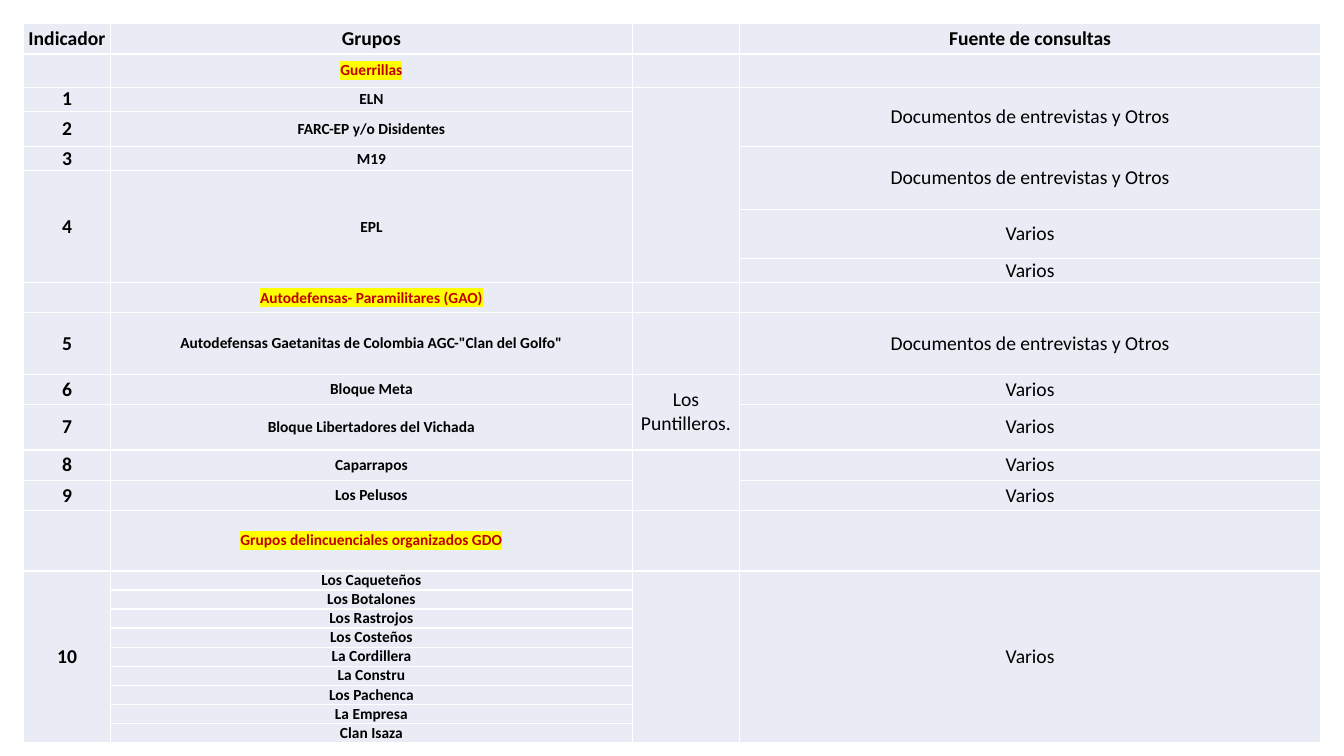
from dataclasses import dataclass
from typing import Any, Optional

import pptx
import pptx.dml.color
import pptx.enum.text
import pptx.oxml.ns
import pptx.util
from lxml import etree

UNIT = pptx.util.Inches(0.01)
SLIDE_COLUMNS, SLIDE_ROWS = 1333.3, 750
TABLE_LEFT, TABLE_TOP = 23.5, 23.5
COLUMN_WIDTHS = (86, 518, 106, 577)
FONT = "Calibri"
COLORS = {
    "text": "000000",
    "section": "C00000",
    "highlight": "FFFF00",
    "cell": "E9EBF5",
    "border": "FFFFFF",
}
INTERVIEWS = "Documentos de entrevistas y Otros"
VARIOUS = "Varios"
GANGS = (
    "Los Botalones", "Los Rastrojos", "Los Costeños", "La Cordillera",
    "La Constru", "Los Pachenca", "La Empresa", "Clan Isaza",
)


@dataclass(frozen=True)
class Row:
    """A None entry continues the cell above it."""

    height: float
    indicator: Optional[str] = ""
    group: Optional[str] = ""
    alliance: Optional[str] = ""
    source: Optional[str] = ""
    kind: str = "body"

    def texts(self) -> tuple[Optional[str], ...]:
        return self.indicator, self.group, self.alliance, self.source


ROWS = [
    Row(30, "Indicador", "Grupos", "", "Fuente de consultas", kind="header"),
    Row(33, group="Guerrillas", kind="section"),
    Row(24, "1", "ELN", "", INTERVIEWS),
    Row(35, "2", "FARC-EP y/o Disidentes", None, None),
    Row(24, "3", "M19", None, INTERVIEWS),
    Row(38, "4", "EPL", None, None),
    Row(49, None, None, None, VARIOUS),
    Row(24, None, None, None, VARIOUS),
    Row(30, group="Autodefensas- Paramilitares (GAO)", kind="section"),
    Row(61, "5", 'Autodefensas Gaetanitas de Colombia AGC-"Clan del Golfo"', "", INTERVIEWS),
    Row(30, "6", "Bloque Meta", "Los Puntilleros.", VARIOUS),
    Row(45, "7", "Bloque Libertadores del Vichada", None, VARIOUS),
    Row(30, "8", "Caparrapos", "", VARIOUS),
    Row(30, "9", "Los Pelusos", None, VARIOUS),
    Row(60, group="Grupos delincuenciales organizados GDO", kind="section"),
    Row(18.8, "10", "Los Caqueteños", "", VARIOUS),
    *(Row(18.8, None, gang, None, None) for gang in GANGS),
]


def grid(count: float) -> pptx.util.Emu:
    return pptx.util.Emu(round(count * UNIT))


def add_element(parent: Any, tag: str, **attributes: str) -> Any:
    return etree.SubElement(parent, pptx.oxml.ns.qn(tag), **attributes)


def write_text(cell: Any, text: str, *, size: float, bold: bool, color: str,
               highlight: Optional[str] = None) -> None:
    paragraph = cell.text_frame.paragraphs[0]
    paragraph.alignment = pptx.enum.text.PP_ALIGN.CENTER
    if not text:
        add_element(paragraph._p, "a:endParaRPr", sz=str(round(size * 100)))
        return
    run = paragraph.add_run()
    run.text = text
    run.font.size = pptx.util.Pt(size)
    run.font.bold = bold
    run.font.color.rgb = pptx.dml.color.RGBColor.from_string(COLORS[color])
    if highlight:
        mark = add_element(run.font._element, "a:highlight")
        add_element(mark, "a:srgbClr", val=COLORS[highlight])
    run.font.name = FONT


def format_cell(cell: Any) -> None:
    properties = cell._tc.get_or_add_tcPr()
    for side in ("a:lnL", "a:lnR", "a:lnT", "a:lnB"):
        line = add_element(properties, side, w=str(pptx.util.Pt(1)))
        fill = add_element(line, "a:solidFill")
        add_element(fill, "a:srgbClr", val=COLORS["border"])
    cell.fill.solid()
    cell.fill.fore_color.rgb = pptx.dml.color.RGBColor.from_string(COLORS["cell"])
    cell.margin_left = cell.margin_right = cell.margin_top = cell.margin_bottom = 0
    cell.vertical_anchor = pptx.enum.text.MSO_ANCHOR.MIDDLE


def write_cell(cell: Any, row: Row, column: int, text: str) -> None:
    is_section = row.kind == "section"
    is_small = not text or (column == 1 and row.kind != "header")
    write_text(
        cell, text,
        size=11 if is_small else 14,
        bold=column < 2 or row.kind == "header",
        color="section" if is_section else "text",
        highlight="highlight" if is_section else None,
    )


def merge_continued(table: Any, column: int) -> None:
    start = 0
    for index in range(1, len(ROWS) + 1):
        if index < len(ROWS) and ROWS[index].texts()[column] is None:
            continue
        if index - start > 1:
            table.cell(start, column).merge(table.cell(index - 1, column))
        start = index


def add_groups_table(slide: Any) -> None:
    table = slide.shapes.add_table(
        len(ROWS), len(COLUMN_WIDTHS), grid(TABLE_LEFT), grid(TABLE_TOP),
        grid(sum(COLUMN_WIDTHS)), grid(sum(row.height for row in ROWS)),
    ).table
    table.first_row = False
    table.horz_banding = False
    for column, width in enumerate(COLUMN_WIDTHS):
        table.columns[column].width = grid(width)
    for index, row in enumerate(ROWS):
        table.rows[index].height = grid(row.height)
        for column, text in enumerate(row.texts()):
            cell = table.cell(index, column)
            format_cell(cell)
            write_cell(cell, row, column, text or "")
    for column in range(len(COLUMN_WIDTHS)):
        merge_continued(table, column)


def main() -> None:
    presentation = pptx.Presentation()
    presentation.slide_width = grid(SLIDE_COLUMNS)
    presentation.slide_height = grid(SLIDE_ROWS)
    slide = presentation.slides.add_slide(presentation.slide_layouts[6])
    add_groups_table(slide)
    presentation.save("out.pptx")


if __name__ == "__main__":
    main()
